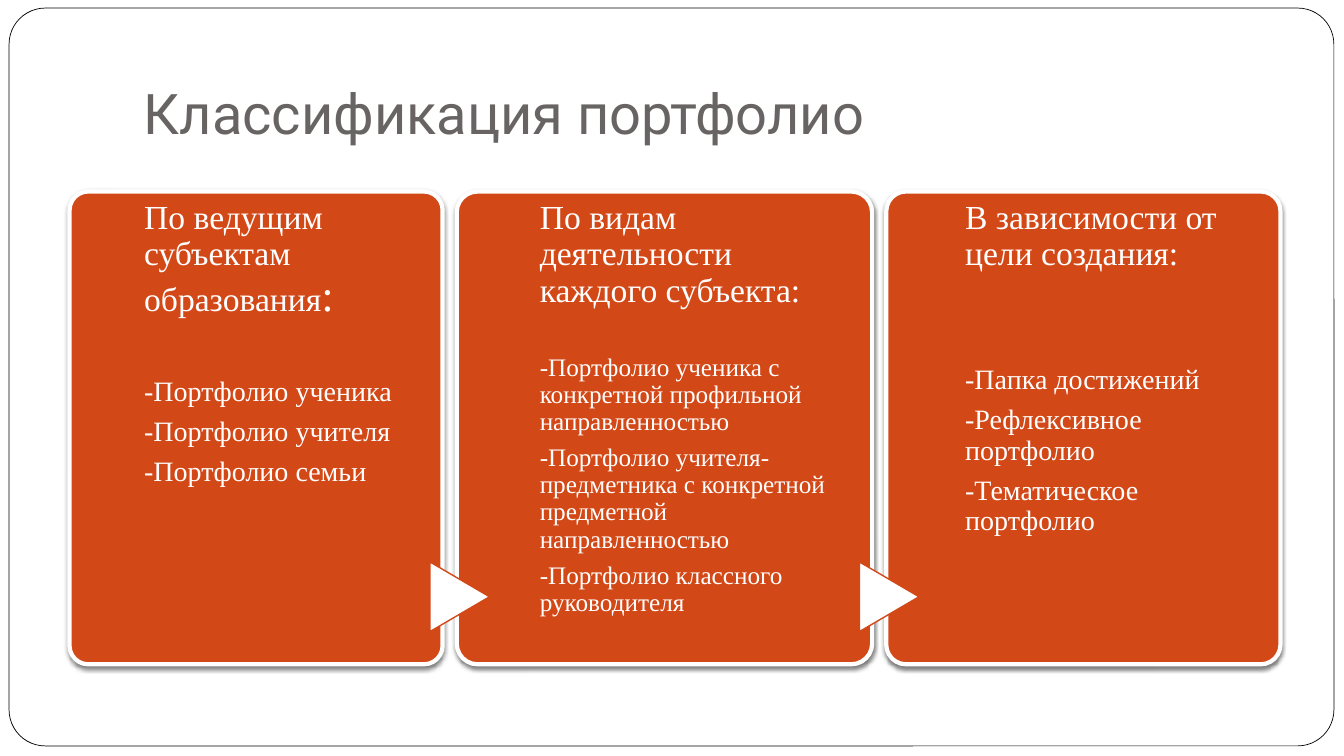
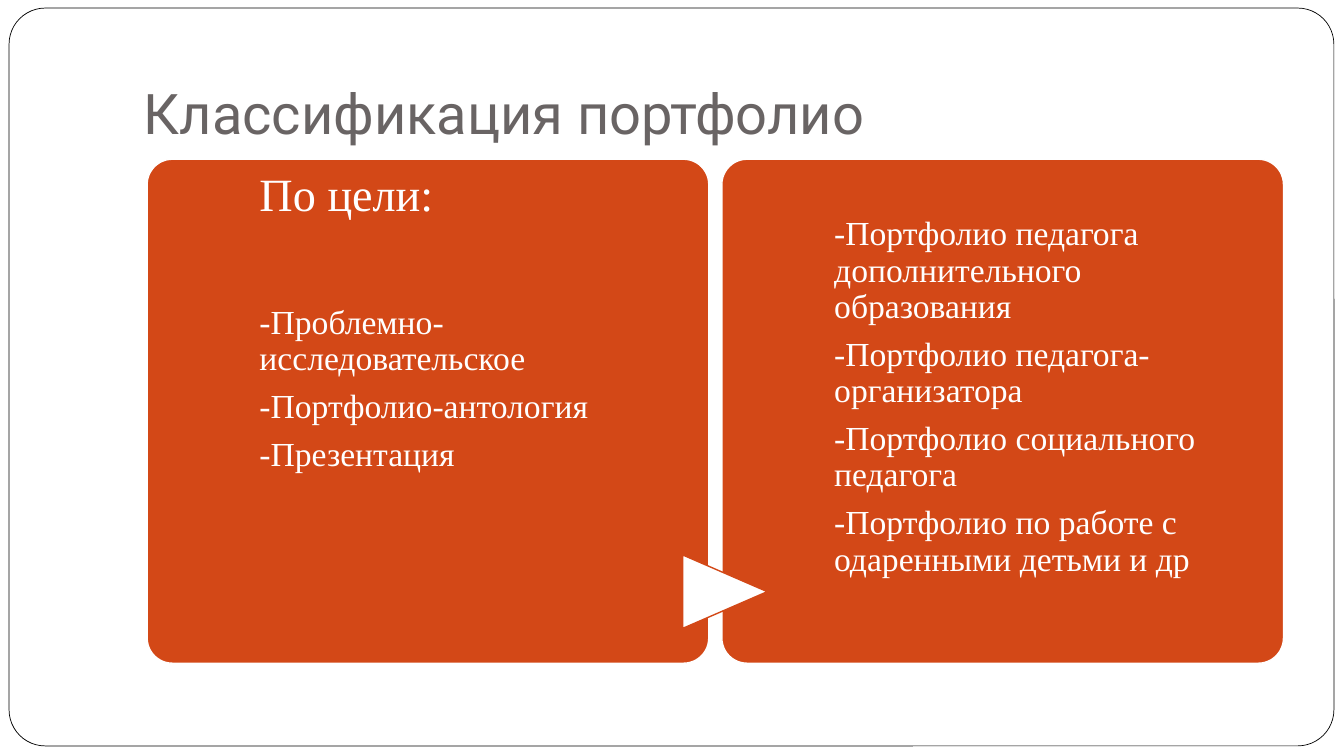
from dataclasses import dataclass

from lxml import etree
from pptx import Presentation
from pptx.dml.color import RGBColor
from pptx.enum.shapes import MSO_SHAPE
from pptx.enum.text import MSO_ANCHOR
from pptx.oxml.ns import qn
from pptx.util import Inches, Pt

ROUNDED = MSO_SHAPE.ROUNDED_RECTANGLE
TRIANGLE = MSO_SHAPE.FLOWCHART_EXTRACT
TOP, BOTTOM = MSO_ANCHOR.TOP, MSO_ANCHOR.BOTTOM

WHITE = RGBColor(0xFF, 0xFF, 0xFF)
BLACK = RGBColor(0x00, 0x00, 0x00)
ORANGE = RGBColor(0xD3, 0x48, 0x17)
GREY = RGBColor(0x69, 0x64, 0x64)
TITLE_FONT = "Roboto"
BODY_FONT = "Times New Roman"

TEXT_INDENT, TEXT_SHARE = 0.2, 0.745
LINE_SPACING, SPACE_SHARE = 0.9, 0.35


@dataclass
class Panel:
    width: float
    items: list
    item_size: float
    heading: str = ""
    heading_size: float = 24
    heading_gap: float = 0
    colon_size: float = 0
    top_inset: float = 0.09


@dataclass
class PanelRow:
    left: float
    top: float
    height: float
    gap: float
    border: float
    shadow: bool
    arrow_width: float
    arrow_height: float
    arrow_middle: float
    panels: list


class Deck:
    def __init__(self):
        self.deck = Presentation()
        self.deck.slide_width = Inches(13.33)
        self.deck.slide_height = Inches(7.5)
        self.page = None

    def add_page(self, title):
        self.page = self.deck.slides.add_slide(self.deck.slide_layouts[6])
        self.shape(ROUNDED, 0.09, 0.08, 13.14, 7.32, WHITE, BLACK, 0.5, 0.049)
        frame = self.text_box(1.33, 0.3, 11.33, 1.25, (0.1, 0.05, 0.1, 0.1), BOTTOM)
        para = frame.paragraphs[0]
        para.text = title
        self.style(para, TITLE_FONT, 40, GREY)

    def shape(self, kind, left, top, width, height, fill, line, weight, radius=None):
        shape = self.page.shapes.add_shape(
            kind, Inches(left), Inches(top), Inches(width), Inches(height))
        shape.shadow.inherit = False
        shape.fill.solid()
        shape.fill.fore_color.rgb = fill
        shape.line.color.rgb = line
        shape.line.width = Pt(weight)
        if radius is not None:
            shape.adjustments[0] = radius
        return shape

    def drop_shadow(self, shape):
        effects = shape.element.spPr.find(qn("a:effectLst"))
        shadow = etree.SubElement(
            effects, qn("a:outerShdw"), blurRad=str(Pt(3)), dist=str(Pt(2)),
            dir="5400000", rotWithShape="0")
        color = etree.SubElement(shadow, qn("a:srgbClr"), val=str(BLACK))
        etree.SubElement(color, qn("a:alpha"), val="50000")

    def text_box(self, left, top, width, height, insets, anchor):
        box = self.page.shapes.add_textbox(
            Inches(left), Inches(top), Inches(width), Inches(height))
        frame = box.text_frame
        frame.word_wrap = True
        frame.vertical_anchor = anchor
        (frame.margin_left, frame.margin_top,
         frame.margin_right, frame.margin_bottom) = map(Inches, insets)
        return frame

    def style(self, para, font, size, color):
        para.font.name = font
        para.font.size = Pt(size)
        para.font.color.rgb = color

    def panel_text(self, panel, left, top, height):
        frame = self.text_box(
            left + panel.width * TEXT_INDENT, top, panel.width * TEXT_SHARE,
            height, (0, panel.top_inset, 0, 0), TOP)
        lines = [(item, panel.item_size, panel.item_size * SPACE_SHARE)
                 for item in panel.items]
        if panel.heading:
            lines.insert(0, (panel.heading, panel.heading_size, panel.heading_gap))
        for index, (text, size, gap) in enumerate(lines):
            para = frame.add_paragraph() if index else frame.paragraphs[0]
            para.add_run().text = text
            self.style(para, BODY_FONT, size, WHITE)
            para.line_spacing = LINE_SPACING
            para.space_after = Pt(gap)
        if panel.colon_size:
            span = frame.paragraphs[0].add_run()
            span.text = ":"
            span.font.size = Pt(panel.colon_size)

    def arrow(self, row, center):
        arrow = self.shape(
            TRIANGLE, center - row.arrow_width / 2,
            row.arrow_middle - row.arrow_height / 2,
            row.arrow_width, row.arrow_height, WHITE, ORANGE, 1)
        arrow.rotation = 90

    def panel_row(self, row):
        left = row.left
        for index, panel in enumerate(row.panels):
            card = self.shape(ROUNDED, left, row.top, panel.width, row.height,
                              ORANGE, WHITE, row.border, 0.05)
            if row.shadow:
                self.drop_shadow(card)
            if index:
                self.arrow(row, left + 0.03)
            self.panel_text(panel, left, row.top, row.height)
            left += panel.width + row.gap

    def save(self):
        self.deck.save("out.pptx")


ROWS = [
    PanelRow(0.69, 1.9, 4.69, 0.14, 3, True, 0.69, 0.59, 5.92, [
        Panel(3.7, ["-Портфолио ученика", "-Портфолио учителя", "-Портфолио семьи"],
              20, "По ведущим субъектам образования", heading_gap=40, colon_size=32),
        Panel(4.12, ["-Портфолио ученика с конкретной профильной направленностью",
                     "-Портфолио учителя-предметника с конкретной предметной "
                     "направленностью",
                     "-Портфолио классного руководителя"],
              18, "По видам деятельности каждого субъекта:", heading_gap=32),
        Panel(3.91, ["-Папка достижений", "-Рефлексивное портфолио",
                     "-Тематическое портфолио"],
              20, "В зависимости от цели создания:", heading_gap=66),
    ]),
    PanelRow(1.46, 1.58, 5, 0.13, 1, False, 0.73, 0.84, 5.87, [
        Panel(5.57, ["-Проблемно-исследовательское", "-Портфолио-антология",
                     "-Презентация"],
              24, "По цели:", 33, 60, top_inset=0.12),
        Panel(5.57, ["-Портфолио педагога дополнительного образования",
                     "-Портфолио педагога-организатора",
                     "-Портфолио социального педагога",
                     "-Портфолио по работе с одаренными детьми и др"],
              24, top_inset=0.57),
    ]),
]


def main():
    deck = Deck()
    for row in ROWS:
        deck.add_page("Классификация портфолио")
        deck.panel_row(row)
    deck.save()


if __name__ == "__main__":
    main()
